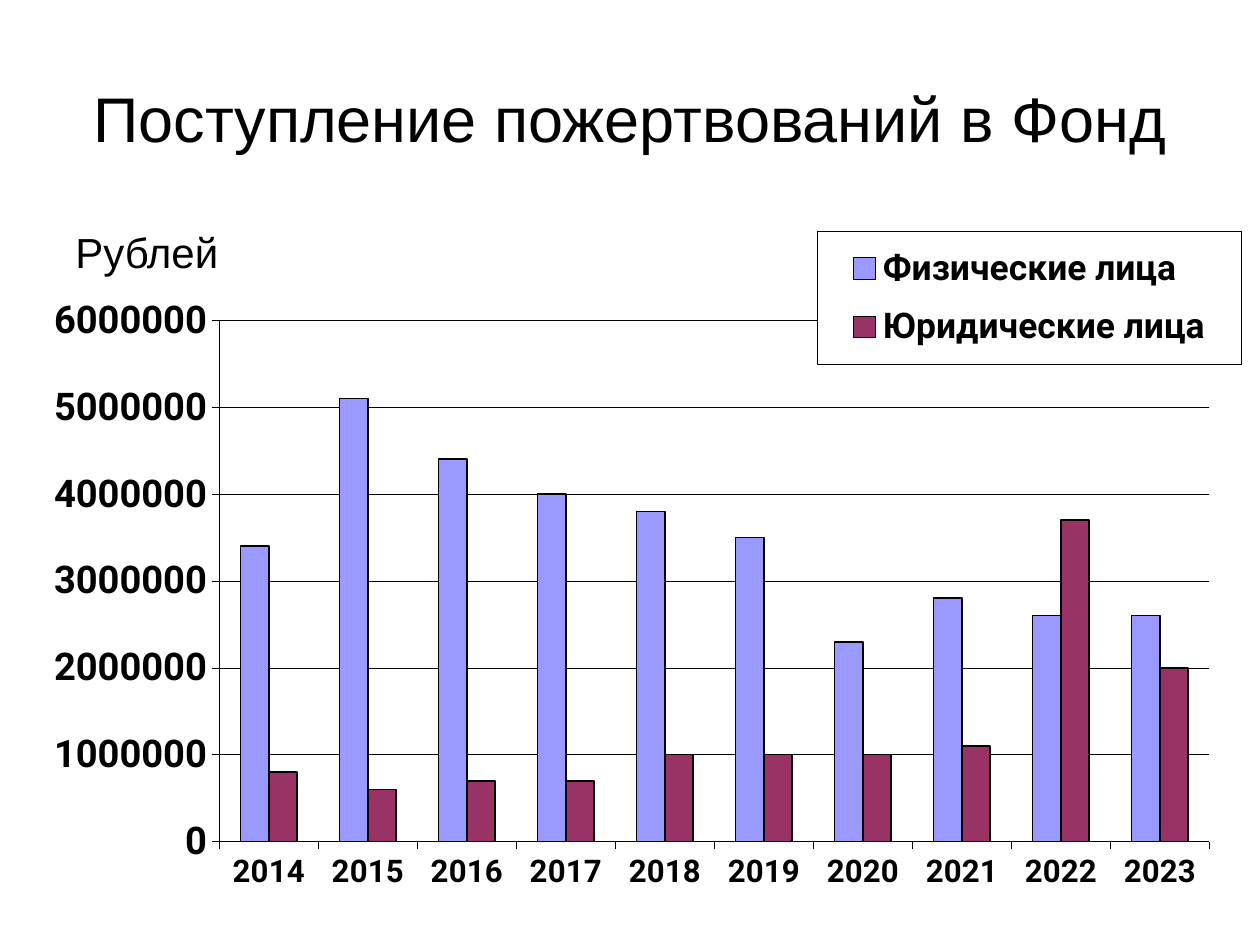
from pptx import Presentation
from pptx.chart.data import CategoryChartData as ChartData
from pptx.dml.color import RGBColor as RGB
from pptx.enum.chart import XL_CHART_TYPE as Kind
from pptx.enum.chart import XL_LEGEND_POSITION as Spot
from pptx.enum.chart import XL_TICK_LABEL_POSITION as Label
from pptx.enum.chart import XL_TICK_MARK as Tick
from pptx.enum.text import MSO_ANCHOR as Anchor
from pptx.enum.text import PP_ALIGN as Align
from pptx.oxml import parse_xml
from pptx.oxml.ns import nsdecls
from pptx.util import Pt

TITLE = "Поступление пожертвований в Фонд"
UNIT = "Рублей"
YEARS = [str(year) for year in range(2014, 2024)]
MILLION = 1_000_000
# name, fill, millions of roubles by year
GIFTS = [
    ("Физические лица", "9999FF",
     [3.4, 5.1, 4.4, 4.0, 3.8, 3.5, 2.3, 2.8, 2.6, 2.6]),
    ("Юридические лица", "993366",
     [0.8, 0.6, 0.7, 0.7, 1.0, 1.0, 1.0, 1.1, 3.7, 2.0]),
]

# left, top, width, height in px
TITLE_BOX = (63, 38, 1134, 158)
UNIT_BOX = (63, 220, 1134, 624)
CHART_BOX = (8, 142, 1281, 796)
PLOT_BOX = (219, 320, 990, 521)
KEY_BOX = (818, 231, 424, 133)


class Theme:
    ink, paper = "000000", "FFFFFF"
    text, data = "Arial", "Roboto"
    title, unit, chart = 36, 24, 22
    years, scale, key = 17.8, 21.8, 20.2
    thin, edge = 0.25, 1


def emu(px):
    return round(px * 914400 / 126)


def set_font(font, name, size, bold=False):
    font.name, font.size, font.bold = name, Pt(size), bold
    font.color.rgb = RGB.from_string(Theme.ink)


def set_line(line, width):
    line.color.rgb = RGB.from_string(Theme.ink)
    line.width = Pt(width)


def add_text(slide, box, text, size, align, anchor):
    frame = slide.shapes.add_textbox(*map(emu, box)).text_frame
    frame.word_wrap = True
    frame.vertical_anchor = anchor
    para = frame.paragraphs[0]
    para.text, para.alignment = text, align
    set_font(para.font, Theme.text, size)
    return para


def layout(box, inner=False):
    """Manual layout for a px box, as fractions of the chart."""
    left, top, wide, high = CHART_BOX
    parts = {"x": (box[0] - left) / wide, "y": (box[1] - top) / high,
             "w": box[2] / wide, "h": box[3] / high}
    target = '<c:layoutTarget val="inner"/>' if inner else ""
    modes = "".join(f'<c:{k}Mode val="edge"/>' for k in "xy")
    sizes = "".join(f'<c:{k} val="{v:.3f}"/>' for k, v in parts.items())
    return parse_xml(f'<c:layout {nsdecls("c")}><c:manualLayout>{target}'
                     f'{modes}{sizes}</c:manualLayout></c:layout>')


def place(node, box, index, inner=False):
    for old in node.xpath("c:layout"):
        node.remove(old)
    node.insert(index, layout(box, inner))


def style_axis(axis, size):
    axis.major_tick_mark, axis.minor_tick_mark = Tick.OUTSIDE, Tick.NONE
    set_font(axis.tick_labels.font, Theme.data, size, True)
    set_line(axis.format.line, Theme.thin)


def style_key(chart):
    chart.has_legend = True
    key = chart.legend
    key.position, key.include_in_layout = Spot.RIGHT, False
    set_font(key.font, Theme.data, Theme.key, True)
    node = key._element
    place(node, KEY_BOX, 1)
    node.xpath("c:txPr")[0].addprevious(parse_xml(
        f'<c:spPr {nsdecls("c", "a")}>'
        f'<a:solidFill><a:srgbClr val="{Theme.paper}"/></a:solidFill>'
        f'<a:ln w="{Pt(Theme.thin)}"><a:solidFill>'
        f'<a:srgbClr val="{Theme.ink}"/></a:solidFill></a:ln></c:spPr>'))


def add_gifts(slide):
    data = ChartData(number_format="0")
    data.categories = YEARS
    for name, _, sums in GIFTS:
        data.add_series(name, [round(v * MILLION) for v in sums])
    chart = slide.shapes.add_chart(
        Kind.COLUMN_CLUSTERED, *map(emu, CHART_BOX), data).chart
    chart.has_title = False
    set_font(chart.font, Theme.data, Theme.chart, True)

    plot = chart.plots[0]
    plot.gap_width, plot.overlap, plot.vary_by_categories = 150, 0, False
    for bars, (_, color, _) in zip(plot.series, GIFTS):
        bars.invert_if_negative = False
        bars.format.fill.solid()
        bars.format.fill.fore_color.rgb = RGB.from_string(color)
        set_line(bars.format.line, Theme.edge)

    style_axis(chart.category_axis, Theme.years)
    chart.category_axis.tick_label_position = Label.LOW
    axis = chart.value_axis
    style_axis(axis, Theme.scale)
    axis.minimum_scale, axis.maximum_scale = 0, 6 * MILLION
    axis.major_unit = MILLION
    axis.has_major_gridlines = True
    set_line(axis.major_gridlines.format.line, Theme.thin)

    style_key(chart)
    area = chart._chartSpace.xpath("c:chart/c:plotArea")[0]
    place(area, PLOT_BOX, 0, True)


def main():
    deck = Presentation()
    deck.slide_width, deck.slide_height = emu(1260), emu(945)
    slide = deck.slides.add_slide(deck.slide_layouts[6])
    add_text(slide, TITLE_BOX, TITLE, Theme.title, Align.CENTER,
             Anchor.MIDDLE)
    unit = add_text(slide, UNIT_BOX, UNIT, Theme.unit, Align.LEFT,
                    Anchor.TOP)
    unit.space_before = Pt(Theme.unit * 0.2)
    add_gifts(slide)
    deck.save("out.pptx")


if __name__ == "__main__":
    main()
